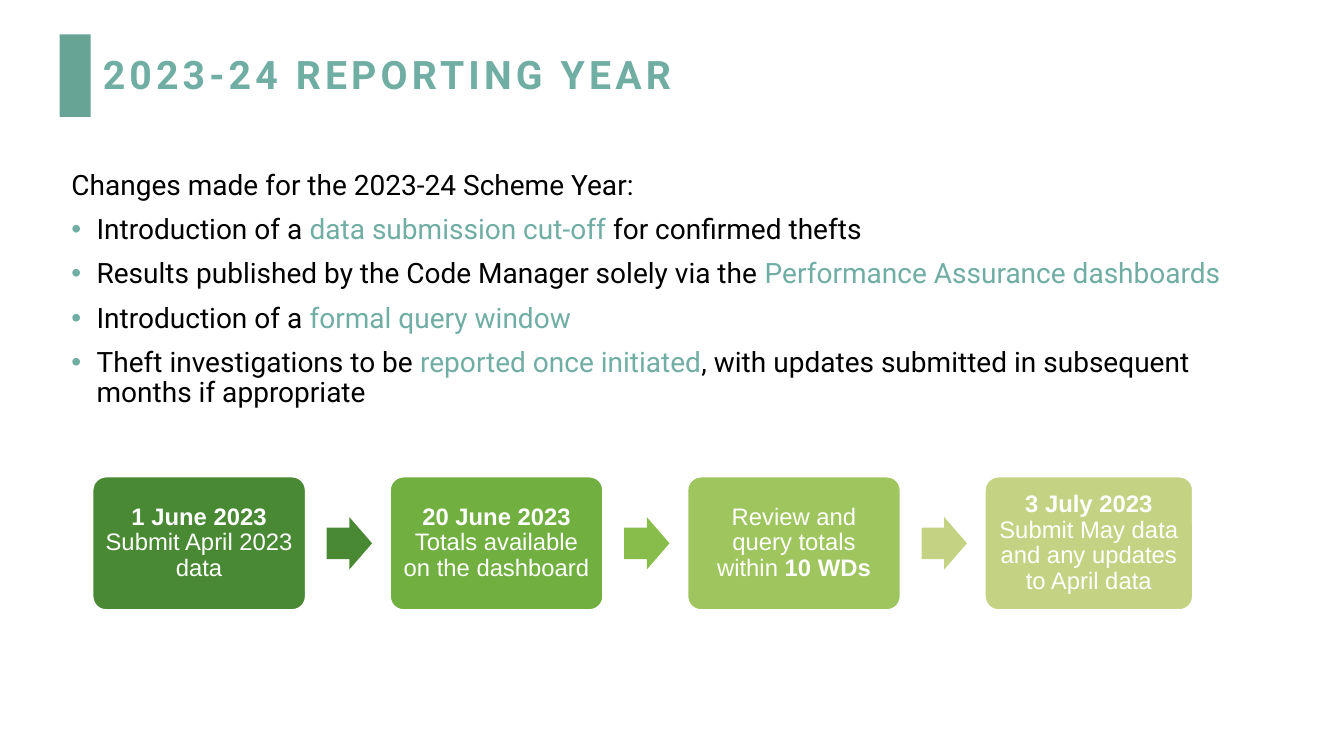
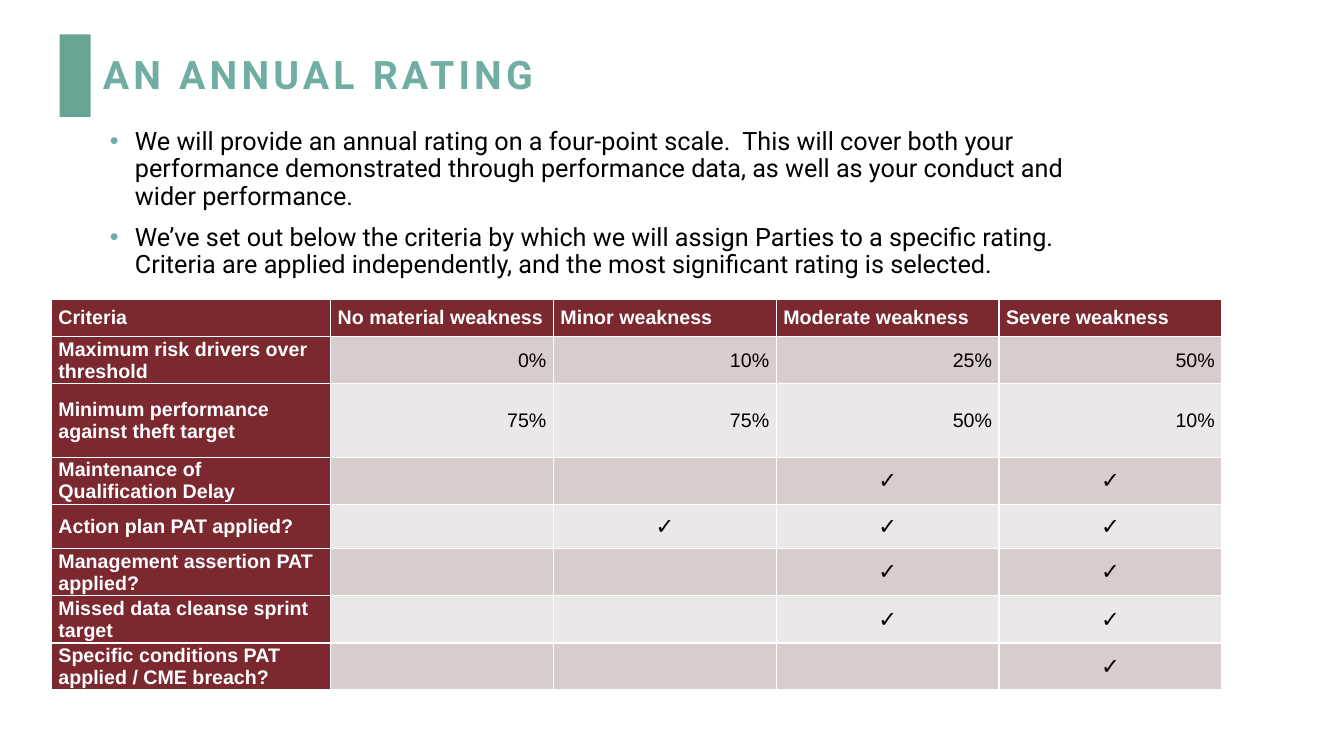
from pptx import Presentation
from pptx.dml.color import RGBColor
from pptx.enum.shapes import MSO_SHAPE
from pptx.enum.text import MSO_ANCHOR, PP_ALIGN
from pptx.oxml.ns import qn
from pptx.util import Inches, Pt
from lxml import etree

COLORS = {
    "band": "68A495", "accent": "70ADA3", "text": "000000", "white": "FFFFFF",
    "dark green": "498934", "green": "71AF41", "arrow green": "88BD4C",
    "light green": "9EC55E", "pale green": "C4D383",
    "maroon": "7B282E", "row dark": "D7CDCD", "row light": "ECE8E8",
}


def color(name):
    return RGBColor.from_string(COLORS[name])


def write_text(frame, paragraphs, size, font="Roboto", fill="text", bold=False,
               accent=None, accent_bold=False, align=PP_ALIGN.LEFT, line=0.9,
               gap=0, bullets_from=None, tracking=None):
    """Fill a frame; in each paragraph every second part is the accented one."""
    frame.word_wrap = True
    for index, parts in enumerate(paragraphs):
        para = frame.paragraphs[0] if index == 0 else frame.add_paragraph()
        para.alignment = align
        para.line_spacing = line
        para.space_before = Pt(gap if index else 0)
        if bullets_from is not None and index >= bullets_from:
            props = para._p.get_or_add_pPr()
            props.set("marL", str(Inches(0.25)))
            props.set("indent", str(-Inches(0.25)))
            bullet_color = etree.SubElement(props, qn("a:buClr"))
            etree.SubElement(bullet_color, qn("a:srgbClr"), val=COLORS["accent"])
            etree.SubElement(props, qn("a:buFont"), typeface="Arial")
            etree.SubElement(props, qn("a:buChar"), char="•")
        for position, part in enumerate(parts):
            if not part:
                continue
            accented = position % 2 == 1
            span = para.add_run()
            span.text = part
            span.font.size = Pt(size)
            span.font.name = font
            span.font.bold = accent_bold if accented else bold
            span.font.color.rgb = color(accent if accented and accent else fill)
            if tracking:
                span.font._element.set("spc", str(tracking * 100))


deck = Presentation()
deck.slide_width, deck.slide_height = Inches(13.33), Inches(7.5)

# Pages with the shared band and title
pages = []
for heading in ("2023-24 REPORTING YEAR", "AN ANNUAL RATING"):
    page = deck.slides.add_slide(deck.slide_layouts[5])
    band = page.shapes.add_shape(MSO_SHAPE.RECTANGLE, Inches(0.59), Inches(0.34),
                                 Inches(0.31), Inches(0.82))
    band.shadow.inherit = False
    band.fill.solid()
    band.fill.fore_color.rgb = color("band")
    band.line.fill.background()
    title = page.shapes.title
    title.left, title.top = Inches(0.92), Inches(0.4)
    title.width, title.height = Inches(10.15), Inches(0.72)
    title.text_frame.vertical_anchor = MSO_ANCHOR.MIDDLE
    write_text(title.text_frame, [[heading]], 28, fill="accent", bold=True, tracking=3)
    pages.append(page)
year_page, rating_page = pages

# Reporting year: changes
changes = [
    ["Changes made for the 2023-24 Scheme Year:"],
    ["Introduction of a ", "data submission cut-off ", "for confirmed thefts"],
    ["Results published by the Code Manager solely via the ",
     "Performance Assurance dashboards"],
    ["Introduction of a ", "formal query window"],
    ["Theft investigations to be ", "reported once initiated",
     ", with updates submitted in subsequent months if appropriate"],
]
box = year_page.shapes.add_textbox(Inches(0.61), Inches(1.65), Inches(12.11), Inches(2.6))
write_text(box.text_frame, changes, 20, accent="accent", gap=10, bullets_from=1)

# Reporting year: timeline of steps, each with the arrow that follows it
steps = [
    ("dark green", "dark green", 2.11, [["", "1 June 2023"], ["Submit April 2023 data"]]),
    ("green", "arrow green", 2.11,
     [["", "20 June 2023"], ["Totals available on the dashboard"]]),
    ("light green", "pale green", 2.11, [["Review and query totals within ", "10 WDs"]]),
    ("pale green", None, 2.06,
     [["", "3 July 2023"], ["Submit May data and any updates to April data"]]),
]
for index, (step_fill, arrow_fill, width, words) in enumerate(steps):
    left = 0.92 + index * 2.95
    step = year_page.shapes.add_shape(MSO_SHAPE.ROUNDED_RECTANGLE, Inches(left),
                                      Inches(4.73), Inches(width), Inches(1.32))
    step.adjustments[0] = 0.1
    step.shadow.inherit = False
    step.fill.solid()
    step.fill.fore_color.rgb = color(step_fill)
    step.line.color.rgb = color("white")
    step.line.width = Pt(1)
    frame = step.text_frame
    frame.vertical_anchor = MSO_ANCHOR.MIDDLE
    frame.margin_left = frame.margin_right = Inches(0.07)
    frame.margin_top = frame.margin_bottom = Inches(0.07)
    write_text(frame, words, 17, font="Arial", fill="white", accent_bold=True,
               align=PP_ALIGN.CENTER)
    if arrow_fill:
        arrow = year_page.shapes.add_shape(MSO_SHAPE.RIGHT_ARROW, Inches(left + 2.32),
                                           Inches(5.13), Inches(0.45), Inches(0.52))
        arrow.adjustments[0] = 0.6
        arrow.shadow.inherit = False
        arrow.fill.solid()
        arrow.fill.fore_color.rgb = color(arrow_fill)
        arrow.line.fill.background()

# Annual rating: introduction
introduction = [
    ["We will provide an annual rating on a four-point scale.  This will cover both your "
     "performance demonstrated through performance data, as well as your conduct and "
     "wider performance."],
    ["We’ve set out below the criteria by which we will assign Parties to a specific "
     "rating. Criteria are applied independently, and the most significant rating is "
     "selected."],
]
box = rating_page.shapes.add_textbox(Inches(0.99), Inches(1.23), Inches(10.08), Inches(1.63))
write_text(box.text_frame, introduction, 18, gap=10, bullets_from=0)

# Annual rating: criteria table
criteria = [
    ["Criteria", "No material weakness", "Minor weakness", "Moderate weakness",
     "Severe weakness"],
    ["Maximum risk drivers over threshold", "0%", "10%", "25%", "50%"],
    ["Minimum performance against theft target", "75%", "75%", "50%", "10%"],
    ["Maintenance of Qualification Delay", "", "", "✓", "✓"],
    ["Action plan PAT applied?", "", "✓", "✓", "✓"],
    ["Management assertion PAT applied?", "", "", "✓", "✓"],
    ["Missed data cleanse sprint target", "", "", "✓", "✓"],
    ["Specific conditions PAT applied / CME breach?", "", "", "", "✓"],
]
row_heights = [0.37, 0.44, 0.73] + [0.44] * 5
column_widths = [2.77] + [2.21] * 4
table = rating_page.shapes.add_table(
    len(row_heights), len(column_widths), Inches(0.51), Inches(2.97),
    Inches(sum(column_widths)), Inches(sum(row_heights))).table
table.first_col = True
table.horz_banding = False
for column, width in zip(table.columns, column_widths):
    column.width = Inches(width)
for row_index, (row, height) in enumerate(zip(table.rows, row_heights)):
    row.height = Inches(height)
    for column_index, (cell, words) in enumerate(zip(row.cells, criteria[row_index])):
        heading = row_index == 0 or column_index == 0
        tick = words == "✓"
        stripe = "row dark" if row_index % 2 else "row light"
        cell.fill.solid()
        cell.fill.fore_color.rgb = color("maroon" if heading else stripe)
        cell.vertical_anchor = MSO_ANCHOR.MIDDLE
        cell.margin_left = cell.margin_right = Inches(0.07)
        cell.margin_top = cell.margin_bottom = 0
        if heading:
            align = PP_ALIGN.LEFT
        else:
            align = PP_ALIGN.CENTER if tick else PP_ALIGN.RIGHT
        write_text(cell.text_frame, [[words]], 16 if tick else 14,
                   font="Calibri" if tick else "Arial",
                   fill="white" if heading else "text", bold=heading,
                   align=align, line=1.0)

deck.save("out.pptx")
